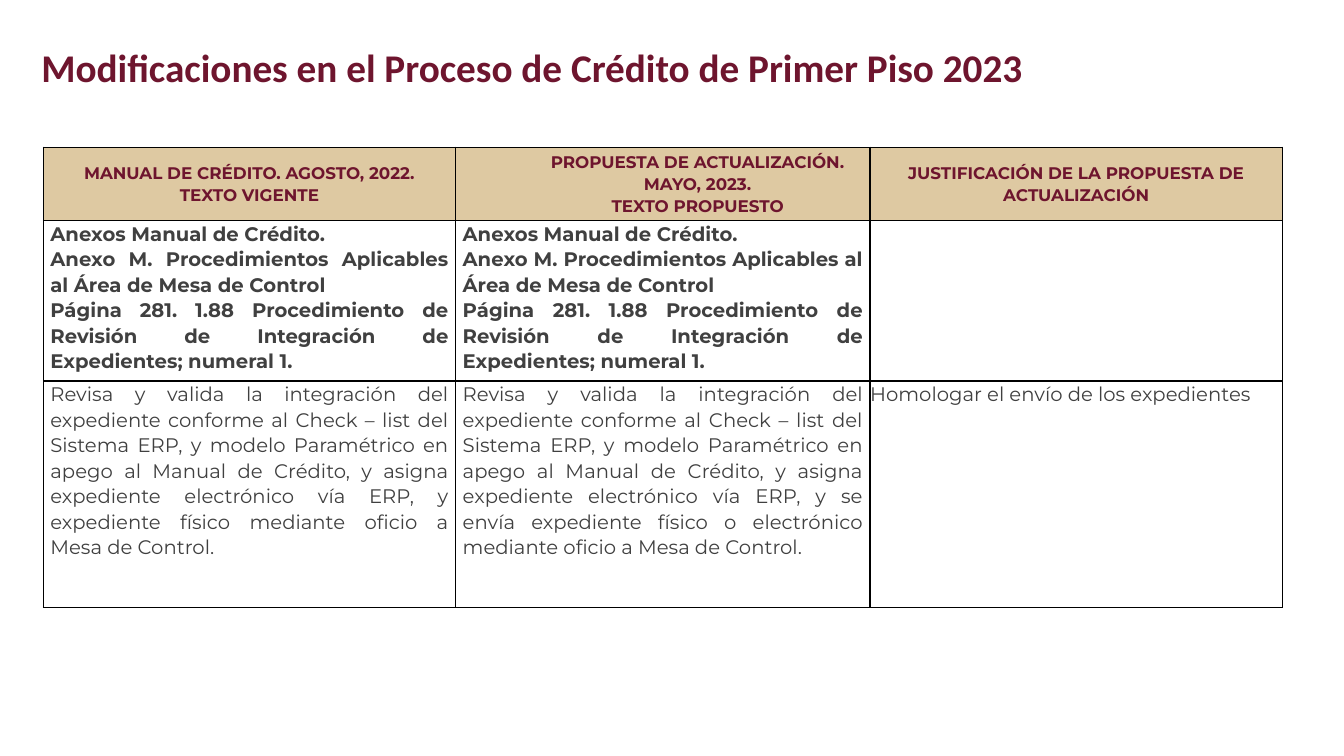
from lxml.etree import SubElement
from pptx import Presentation
from pptx.dml.color import RGBColor
from pptx.enum.text import MSO_ANCHOR, MSO_AUTO_SIZE, PP_ALIGN
from pptx.oxml.ns import qn
from pptx.util import Inches, Pt

WINE = RGBColor(0x6E, 0x15, 0x2E)
SAND = RGBColor(0xDE, 0xC9, 0xA2)
GREY = RGBColor(0x40, 0x40, 0x40)
BORDER = RGBColor(0, 0, 0)

COL_WIDTHS = (4.09, 4.11, 4.09)
ROW_HEIGHTS = (0.73, 1.59, 2.25)
SIDE = 0.07

HEADERS = (
    ("MANUAL DE CRÉDITO. AGOSTO, 2022.", "TEXTO VIGENTE"),
    ("PROPUESTA DE ACTUALIZACIÓN.", "MAYO, 2023.", "TEXTO PROPUESTO"),
    ("JUSTIFICACIÓN DE LA PROPUESTA DE ACTUALIZACIÓN",),
)
ANNEX = (
    "Anexos Manual de Crédito.",
    "Anexo M. Procedimientos Aplicables al Área de Mesa de Control",
    "Página 281. 1.88 Procedimiento de Revisión de Integración de "
    "Expedientes; numeral 1.",
)
REVIEW = (
    "Revisa y valida la integración del expediente conforme al Check – list "
    "del Sistema ERP, y modelo Paramétrico en apego al Manual de Crédito, y "
    "asigna expediente electrónico vía ERP, y "
)
DETAILS = (
    (REVIEW + "expediente físico mediante oficio a Mesa de Control.",),
    (REVIEW + "se envía expediente físico o electrónico mediante oficio a "
     "Mesa de Control.",),
    ("Homologar el envío de los expedientes",),
)


def write(tf, lines, *, size, color, font="Montserrat", bold=False,
          align=PP_ALIGN.LEFT, spacing=1.0, indent=0):
    """Fill a text frame with one paragraph per line."""
    for i, line in enumerate(lines):
        p = tf.paragraphs[0] if i == 0 else tf.add_paragraph()
        p.alignment = align
        p.line_spacing = spacing
        p.space_before = p.space_after = Pt(0)
        if indent:
            p._p.get_or_add_pPr().set("indent", str(Inches(indent)))
        r = p.add_run()
        r.text = line
        r.font.name = font
        r.font.size = Pt(size)
        r.font.bold = bold
        r.font.color.rgb = color


def set_borders(cell):
    """Draw a thin black line on all four sides of a cell."""
    tcPr = cell._tc.get_or_add_tcPr()
    for i, side in enumerate(("lnL", "lnR", "lnT", "lnB")):
        ln = tcPr.makeelement(qn(f"a:{side}"), {"w": str(Pt(1))})
        fill = SubElement(ln, qn("a:solidFill"))
        SubElement(fill, qn("a:srgbClr"), val=str(BORDER))
        tcPr.insert(i, ln)


def format_cell(cell, *, side, fill=None, anchor=MSO_ANCHOR.TOP):
    cell.margin_left = cell.margin_right = Inches(side)
    cell.margin_top = cell.margin_bottom = 0
    cell.vertical_anchor = anchor
    if fill is None:
        cell.fill.background()
    else:
        cell.fill.solid()
        cell.fill.fore_color.rgb = fill
    set_borders(cell)


def add_title(slide, text):
    sp = slide.shapes.title
    sp.left, sp.top = Inches(0.31), Inches(0.38)
    sp.width, sp.height = Inches(10.17), Inches(0.57)
    tf = sp.text_frame
    tf.word_wrap = True
    tf.auto_size = MSO_AUTO_SIZE.NONE
    tf.vertical_anchor = MSO_ANCHOR.TOP
    write(tf, [text], size=28, color=WINE, font="Calibri", bold=True)


def add_comparison(slide):
    table = slide.shapes.add_table(
        len(ROW_HEIGHTS), len(COL_WIDTHS), Inches(0.43), Inches(1.46),
        Inches(sum(COL_WIDTHS)), Inches(sum(ROW_HEIGHTS))).table
    table.first_row = table.horz_banding = False
    for row, height in zip(table.rows, ROW_HEIGHTS):
        row.height = Inches(height)

    for c, width in enumerate(COL_WIDTHS):
        table.columns[c].width = Inches(width)
        head, annex, detail = (table.cell(r, c) for r in range(3))
        last = c == len(COL_WIDTHS) - 1
        side = 0 if last else SIDE

        # Heading
        format_cell(head, side=side, fill=SAND, anchor=MSO_ANCHOR.MIDDLE)
        write(head.text_frame, HEADERS[c], size=12, color=WINE, bold=True,
              align=PP_ALIGN.CENTER, spacing=1.07, indent=0.69 if c == 1 else 0)

        # Annex reference, the same in both versions of the text
        format_cell(annex, side=side)
        if not last:
            write(annex.text_frame, ANNEX, size=14, color=GREY, bold=True,
                  align=PP_ALIGN.JUSTIFY, spacing=1.07)

        # Procedure
        format_cell(detail, side=side)
        write(detail.text_frame, DETAILS[c], size=14, color=GREY,
              align=PP_ALIGN.JUSTIFY, spacing=1.07)


def main():
    prs = Presentation()
    prs.slide_width, prs.slide_height = Inches(13.33), Inches(7.5)
    slide = prs.slides.add_slide(prs.slide_layouts[5])
    add_title(slide, "Modificaciones en el Proceso de Crédito de Primer Piso 2023")
    add_comparison(slide)
    prs.save("out.pptx")


if __name__ == "__main__":
    main()
